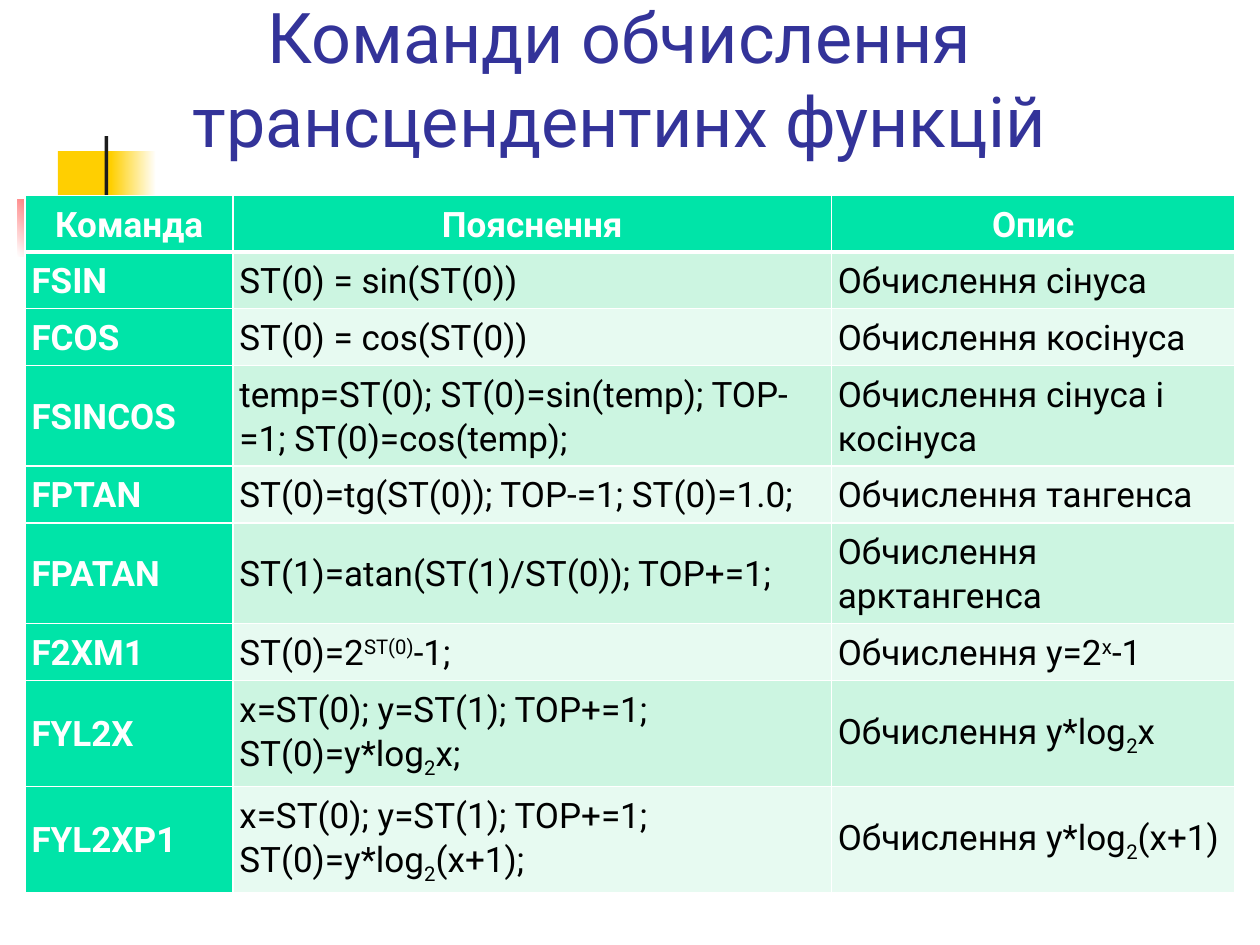
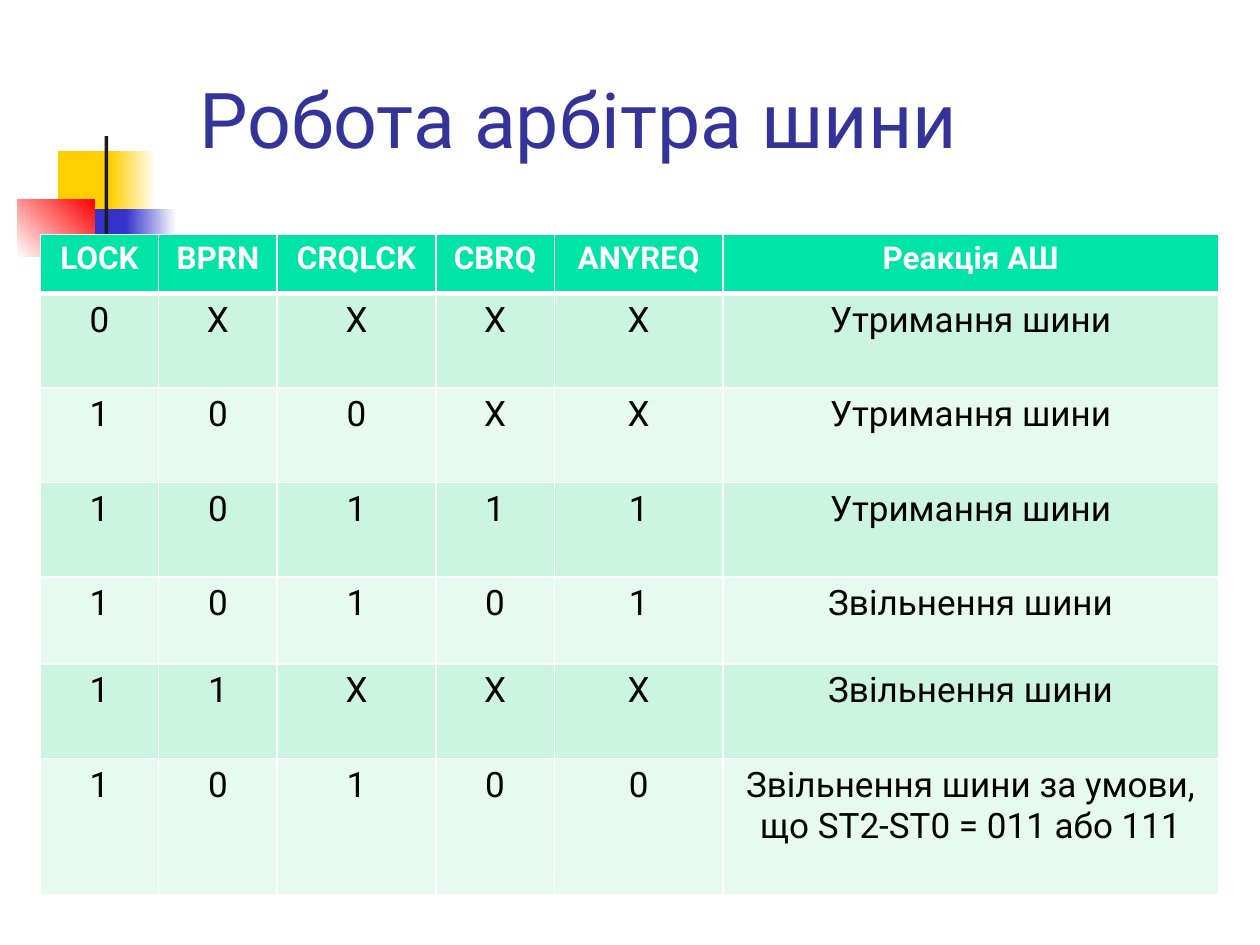
from dataclasses import dataclass

from lxml.etree import SubElement
from pptx import Presentation
from pptx.dml.color import RGBColor
from pptx.enum.shapes import MSO_SHAPE
from pptx.enum.text import MSO_ANCHOR, MSO_AUTO_SIZE, PP_ALIGN
from pptx.oxml.ns import qn
from pptx.util import Inches, Pt


@dataclass(frozen=True)
class Theme:
    """Colours, font and type sizes shared by the slides."""

    font: str = "Roboto"
    title: str = "333399"
    header: str = "00E4A8"
    bands: tuple = ("CCF5E1", "E7FAF1")
    white: str = "FFFFFF"
    ink: str = "000000"
    yellow: str = "FFCF01"
    blue: str = "3333CC"
    red: str = "FF0000"
    bar: str = "1C1C1C"
    long_title_size: int = 40
    title_size: int = 44
    body_size: int = 20
    signal_size: int = 18
    rule: int = 1
    header_rule: int = 3


THEME = Theme()
SCRIPTS = {"^": "30000", "_": "-25000"}

ORNAMENT = [
    ((0.46, 1.2, 0.48, 0.52), (THEME.yellow,), 0),
    ((0.88, 1.2, 0.36, 0.52), (THEME.yellow, THEME.white), 0),
    ((0.59, 1.66, 0.46, 0.52), (THEME.blue,), 0),
    ((1, 1.66, 0.4, 0.52), (THEME.blue, THEME.white), 0),
    ((0.14, 1.58, 0.61, 0.46), (THEME.white, THEME.red), 45),
    ((0.83, 1.08, 0.03, 1.15), (THEME.bar,), 0),
]

COMMANDS = [
    ("Команда", "Пояснення", "Опис"),
    ("FSIN", "ST(0) = sin(ST(0))", "Обчислення сінуса"),
    ("FCOS", "ST(0) = cos(ST(0))", "Обчислення косінуса"),
    ("FSINCOS", "temp=ST(0); ST(0)=sin(temp); TOP-=1; ST(0)=cos(temp);",
     "Обчислення сінуса і косінуса"),
    ("FPTAN", "ST(0)=tg(ST(0)); TOP-=1; ST(0)=1.0;", "Обчислення тангенса"),
    ("FPATAN", "ST(1)=atan(ST(1)/ST(0)); TOP+=1;", "Обчислення арктангенса"),
    ("F2XM1", "ST(0)=2|^ST(0)|-1;", "Обчислення y=2|^x|-1"),
    ("FYL2X", "x=ST(0); y=ST(1); TOP+=1; ST(0)=y*log|_2|x;",
     "Обчислення y*log|_2|x"),
    ("FYL2XP1", "x=ST(0); y=ST(1); TOP+=1; ST(0)=y*log|_2|(x+1);",
     "Обчислення y*log|_2|(x+1)"),
]

ARBITER_STATES = [
    ("LOCK", "BPRN", "CRQLCK", "CBRQ", "ANYREQ", "Реакція АШ"),
    (*"0ХХХХ", "Утримання шини"),
    (*"100ХХ", "Утримання шини"),
    (*"10111", "Утримання шини"),
    (*"10101", "Звільнення шини"),
    (*"11ХХХ", "Звільнення шини"),
    (*"10100", "Звільнення шини за умови, що ST2-ST0 = 011 або 111"),
]


def rgb(code):
    """Turn a hex code into a colour."""
    return RGBColor.from_string(code)


def write(frame, text, *, size, color, bold=False, align=PP_ALIGN.LEFT,
          line_spacing=None, space_after=None):
    """Write text into a frame; pieces led by ^ or _ are raised or lowered."""
    paragraph = frame.paragraphs[0]
    paragraph.alignment = align
    paragraph.line_spacing = line_spacing
    paragraph.space_after = space_after
    for piece in text.split("|"):
        run = paragraph.add_run()
        baseline = SCRIPTS.get(piece[0])
        run.text = piece[1:] if baseline else piece
        run.font.name = THEME.font
        run.font.size = Pt(size)
        run.font.bold = bold
        run.font.color.rgb = rgb(color)
        if baseline:
            run.font._element.set("baseline", baseline)


def add_ornament(slide):
    """Draw the coloured blocks and the upright bar beside the title."""
    for box, colors, angle in ORNAMENT:
        block = slide.shapes.add_shape(MSO_SHAPE.RECTANGLE, *map(Inches, box))
        block.shadow.inherit = False
        block.line.fill.background()
        if len(colors) == 1:
            block.fill.solid()
            block.fill.fore_color.rgb = rgb(colors[0])
        else:
            block.fill.gradient()
            block.fill.gradient_angle = angle
            for stop, color in zip(block.fill.gradient_stops, colors):
                stop.color.rgb = rgb(color)


def place_title(slide, text, box, **text_format):
    """Move the title placeholder to its box and fill it."""
    title = slide.shapes.title
    title.left, title.top, title.width, title.height = map(Inches, box)
    frame = title.text_frame
    frame.word_wrap = True
    frame.auto_size = MSO_AUTO_SIZE.NONE
    frame.vertical_anchor = MSO_ANCHOR.BOTTOM
    write(frame, text, color=THEME.title, **text_format)


def rule_cell(cell, row):
    """Edge a cell in white, with a heavier rule under the header."""
    properties = cell._tc.get_or_add_tcPr()
    heavy_side = {0: "lnB", 1: "lnT"}.get(row)
    for side in ("lnL", "lnR", "lnT", "lnB"):
        width = THEME.header_rule if side == heavy_side else THEME.rule
        line = SubElement(properties, qn(f"a:{side}"), w=str(Pt(width)))
        fill = SubElement(line, qn("a:solidFill"))
        SubElement(fill, qn("a:srgbClr"), val=THEME.white)


def add_grid(slide, rows, origin, widths, heights, *, header_size,
             name_column=False, centered=False, inset=None,
             anchor=MSO_ANCHOR.TOP, **text_format):
    """Add a banded table whose column and row sizes start at its origin."""
    box = (*origin, sum(widths), sum(heights))
    table = slide.shapes.add_table(
        len(rows), len(widths), *map(Inches, box)).table
    for column, width in zip(table.columns, widths):
        column.width = Inches(width)
    for r, (values, height) in enumerate(zip(rows, heights)):
        table.rows[r].height = Inches(height)
        for c, value in enumerate(values):
            cell = table.cell(r, c)
            strong = r == 0 or (name_column and c == 0)
            rule_cell(cell, r)
            cell.fill.solid()
            cell.fill.fore_color.rgb = rgb(
                THEME.header if strong else THEME.bands[(r - 1) % 2])
            cell.vertical_anchor = anchor
            if inset is not None:
                cell.margin_left = cell.margin_right = Inches(inset)
                cell.margin_top = cell.margin_bottom = Inches(inset)
            write(cell.text_frame, value, bold=strong,
                  size=header_size if r == 0 else THEME.body_size,
                  color=THEME.white if strong else THEME.ink,
                  align=PP_ALIGN.CENTER if r == 0 or centered else PP_ALIGN.LEFT,
                  **text_format)


def add_titled_slide(deck):
    """Add a title-only slide with the shared ornament."""
    slide = deck.slides.add_slide(deck.slide_layouts[5])
    add_ornament(slide)
    return slide


def build_commands_slide(deck):
    """Build the table of transcendental function commands."""
    slide = add_titled_slide(deck)
    place_title(slide, "Команди обчислення трансцендентинх функцій",
                (0.35, -0.27, 9.13, 1.6), size=THEME.long_title_size,
                align=PP_ALIGN.CENTER)
    one_line, two_lines, two_with_index = 0.45, 0.79, 0.84
    heights = [one_line] * 3 + [two_lines, one_line] * 2 + [two_with_index] * 2
    add_grid(slide, COMMANDS, (0.2, 1.55), (1.65, 4.75, 3.2), heights,
             header_size=THEME.body_size, name_column=True, inset=0.05,
             anchor=MSO_ANCHOR.MIDDLE, line_spacing=1.07, space_after=Pt(8))


def build_arbiter_slide(deck):
    """Build the truth table of the bus arbiter."""
    slide = add_titled_slide(deck)
    place_title(slide, "Робота арбітра шини", (1.48, -0.25, 8.52, 1.6),
                size=THEME.title_size)
    add_grid(slide, ARBITER_STATES, (0.32, 1.86),
             (0.94, 0.94, 1.26, 0.94, 1.34, 3.93),
             (0.47, 0.75, 0.75, 0.75, 0.69, 0.75, 1.08),
             header_size=THEME.signal_size, centered=True)


def main():
    """Build and save the deck."""
    deck = Presentation()
    deck.slide_width, deck.slide_height = Inches(10), Inches(7.5)
    build_commands_slide(deck)
    build_arbiter_slide(deck)
    deck.save("out.pptx")


if __name__ == "__main__":
    main()
